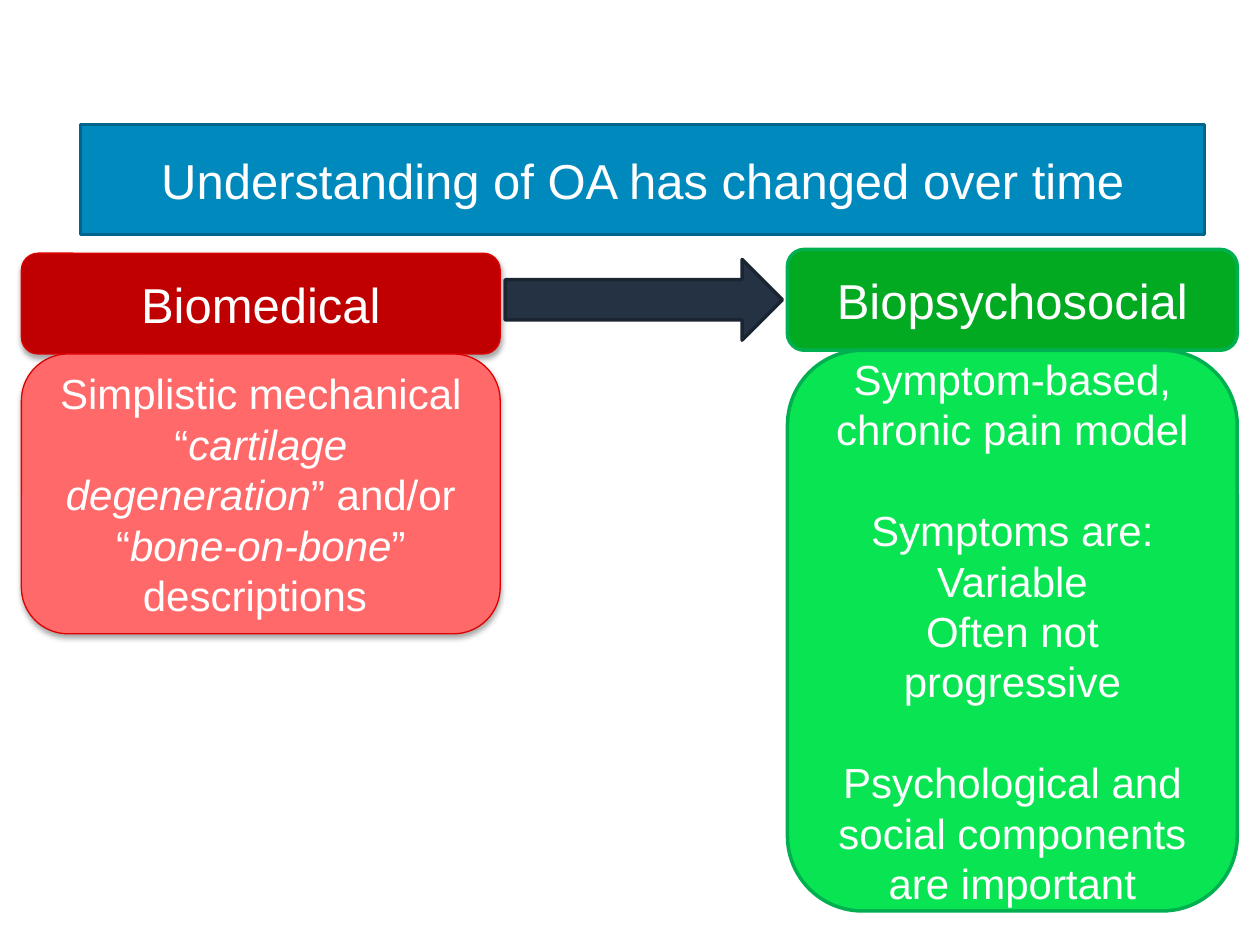
import lxml.etree
import pptx
import pptx.dml.color
import pptx.enum.shapes
import pptx.enum.text
import pptx.oxml
import pptx.oxml.ns
import pptx.util

Inches = pptx.util.Inches
Pt = pptx.util.Pt
RGBColor = pptx.dml.color.RGBColor
SHAPES = pptx.enum.shapes.MSO_SHAPE

WHITE = RGBColor(0xFF, 0xFF, 0xFF)
BLUE = RGBColor(0x00, 0x89, 0xBD)
BLUE_EDGE = RGBColor(0x00, 0x65, 0x8C)
NAVY = RGBColor(0x25, 0x32, 0x44)
NAVY_EDGE = RGBColor(0x1B, 0x25, 0x32)
RED = RGBColor(0xC0, 0x00, 0x00)
PINK = RGBColor(0xFF, 0x69, 0x69)
RED_EDGE = RGBColor(0xDE, 0x00, 0x00)
GREEN = RGBColor(0x02, 0xAA, 0x22)
LIME = RGBColor(0x09, 0xE5, 0x52)
GREEN_EDGE = RGBColor(0x00, 0xB0, 0x50)

HEADING_SIZE = 28
BODY_SIZE = 24
BLOCK_GAP = 28.8
HEADING_HEIGHT = 0.8

BIOMEDICAL = [
    (0, [("Simplistic mechanical “", False), ("cartilage degeneration", True),
         ("” and/or “", False), ("bone-on-bone", True), ("” descriptions ", False)]),
]
BIOPSYCHOSOCIAL = [
    (0, [("Symptom-based, chronic pain model", False)]),
    (BLOCK_GAP, [("Symptoms are:", False)]),
    (0, [("Variable", False)]),
    (0, [("Often not progressive", False)]),
    (BLOCK_GAP, [("Psychological and social components are important", False)]),
]


def add_shadow(shape):
    """Give a shape a soft shadow straight below it."""
    effects = shape._element.spPr.find(pptx.oxml.ns.qn("a:effectLst"))
    shadow = lxml.etree.SubElement(
        effects, pptx.oxml.ns.qn("a:outerShdw"), blurRad=str(Pt(3.1)),
        dist=str(Pt(1.8)), dir="5400000", rotWithShape="0")
    color = lxml.etree.SubElement(shadow, pptx.oxml.ns.qn("a:srgbClr"), val="000000")
    lxml.etree.SubElement(color, pptx.oxml.ns.qn("a:alpha"), val="35000")


def add_block(page, kind, box, fill, edge, edge_width=2, shadow=False):
    """Add a filled and outlined preset shape in the given box."""
    shape = page.shapes.add_shape(kind, *[Inches(length) for length in box])
    shape.shadow.inherit = False
    shape.fill.solid()
    shape.fill.fore_color.rgb = fill
    shape.line.color.rgb = edge
    shape.line.width = Pt(edge_width)
    if shadow:
        add_shadow(shape)
    return shape


def write_text(shape, paragraphs, size):
    """Fill a shape with centred white paragraphs of (gap, spans)."""
    frame = shape.text_frame
    frame.word_wrap = True
    frame.vertical_anchor = pptx.enum.text.MSO_ANCHOR.MIDDLE
    for index, (gap, spans) in enumerate(paragraphs):
        para = frame.add_paragraph() if index else frame.paragraphs[0]
        para.alignment = pptx.enum.text.PP_ALIGN.CENTER
        if gap:
            para.space_before = Pt(gap)
        for words, italic in spans:
            span = para.add_run()
            span.text = words
            span.font.name = "Arial"
            span.font.size = Pt(size)
            span.font.color.rgb = WHITE
            span.font.italic = italic


def add_title(page, box, words):
    """Add the title banner."""
    banner = add_block(page, SHAPES.RECTANGLE, box, BLUE, BLUE_EDGE)
    write_text(banner, [(0, [(words, False)])], HEADING_SIZE)


def add_model(page, box, heading, body, fills, edge, edge_width, shadow):
    """Add a column with a heading block above a description block."""
    left, top, width, height = box
    parts = [
        (top, HEADING_HEIGHT, [(0, [(heading, False)])], HEADING_SIZE),
        (top + HEADING_HEIGHT, height - HEADING_HEIGHT, body, BODY_SIZE),
    ]
    for (part_top, part_height, paragraphs, size), fill in zip(parts, fills):
        block = add_block(page, SHAPES.ROUNDED_RECTANGLE,
                          (left, part_top, width, part_height),
                          fill, edge, edge_width, shadow)
        write_text(block, paragraphs, size)


def main():
    """Build the slide and save it."""
    deck = pptx.Presentation()
    deck.slide_width = Inches(10)
    deck.slide_height = Inches(7.5)
    page = deck.slides.add_slide(deck.slide_layouts[6])
    add_model(page, (0.17, 2.01, 3.8, 3.02), "Biomedical", BIOMEDICAL,
              (RED, PINK), RED_EDGE, 0.75, True)
    add_model(page, (6.25, 1.98, 3.57, 5.25), "Biopsychosocial", BIOPSYCHOSOCIAL,
              (GREEN, LIME), GREEN_EDGE, 2, False)
    add_block(page, SHAPES.RIGHT_ARROW, (4.01, 2.06, 2.2, 0.64), NAVY, NAVY_EDGE)
    add_title(page, (0.64, 0.99, 8.92, 0.87), "Understanding of OA has changed over time")
    deck.save("out.pptx")


if __name__ == "__main__":
    main()
